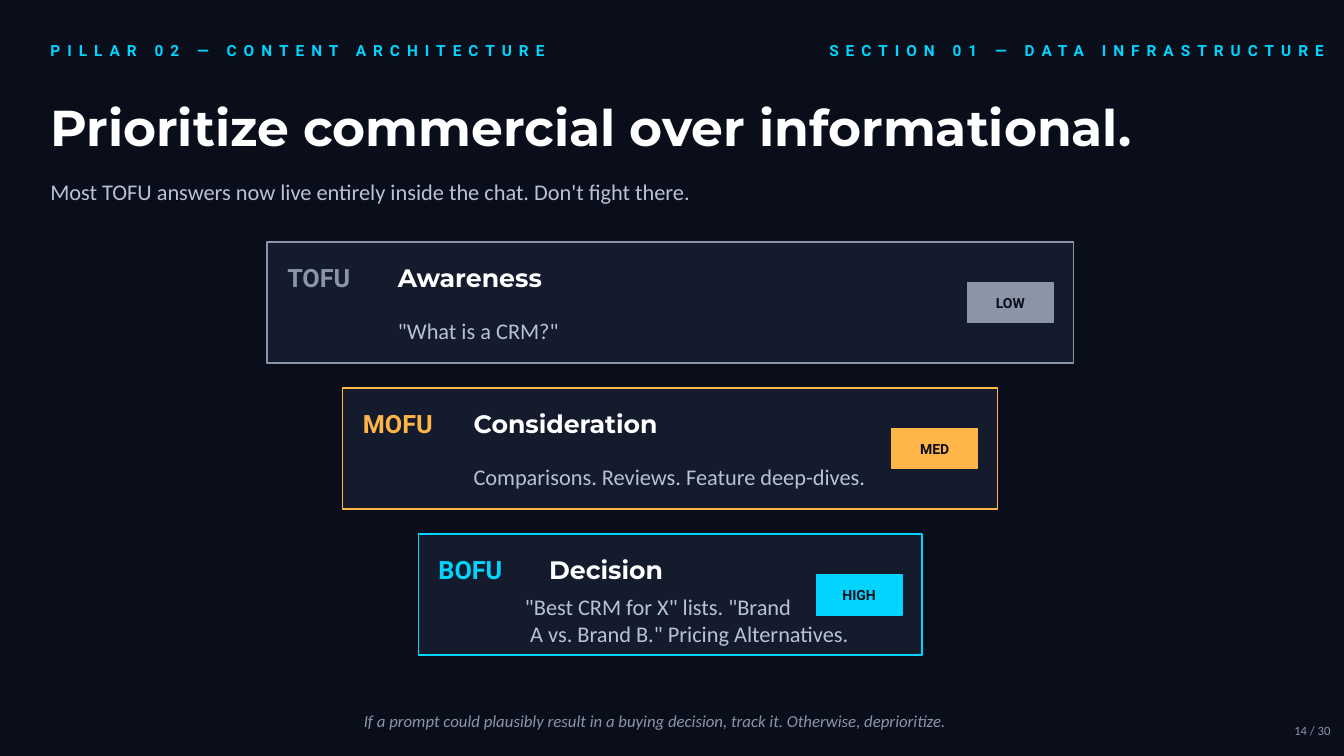
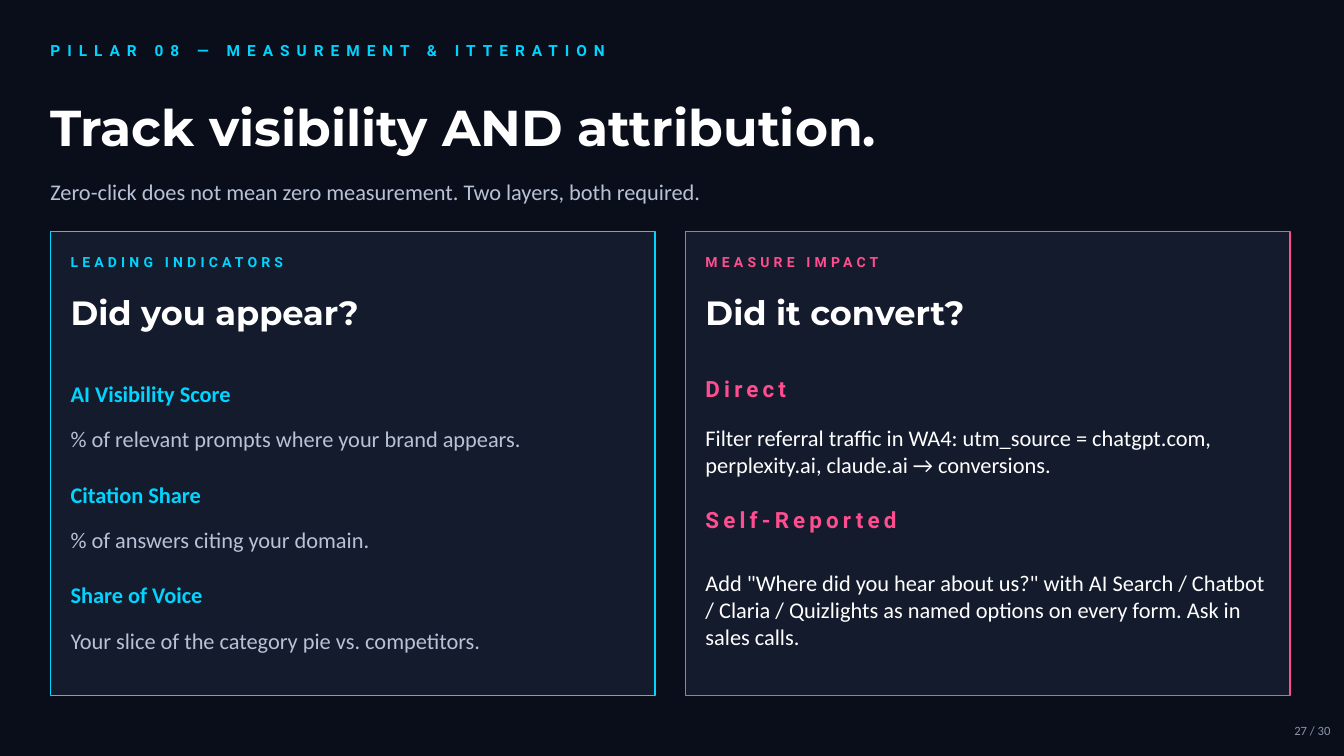
from pptx import Presentation
from pptx.dml.color import RGBColor
from pptx.enum.shapes import MSO_SHAPE
from pptx.enum.text import MSO_ANCHOR, MSO_AUTO_SIZE, PP_ALIGN
from pptx.util import Cm, Pt

RECT = MSO_SHAPE.RECTANGLE
MIDDLE = MSO_ANCHOR.MIDDLE
FIXED = MSO_AUTO_SIZE.NONE
LEFT, CENTER, RIGHT = PP_ALIGN.LEFT, PP_ALIGN.CENTER, PP_ALIGN.RIGHT

COLORS = {
    "night": "0A0E1A", "panel": "141B2D", "white": "FFFFFF", "soft": "B8C2D6",
    "gray": "8B95A8", "amber": "FFB547", "cyan": "00D4FF", "pink": "FF4D8F",
}

# Text styles: font attributes, default colour, letter spacing in points
STYLES = {
    "title": ({"name": "Montserrat", "size": Pt(36), "bold": True}, "white", 0),
    "head": ({"name": "Montserrat", "size": Pt(24), "bold": True}, "white", 0),
    "stage": ({"name": "Montserrat", "size": Pt(18), "bold": True}, "white", 0),
    "code": ({"name": "Roboto", "size": Pt(18), "bold": True}, "gray", 0),
    "badge": ({"name": "Roboto", "size": Pt(10), "bold": True}, "night", 0),
    "kicker": ({"name": "Roboto", "size": Pt(11), "bold": True}, "cyan", 5),
    "label": ({"name": "Roboto", "size": Pt(10), "bold": True}, "cyan", 3),
    "spaced": ({"name": "Roboto", "size": Pt(16), "bold": True}, "pink", 3),
    "term": ({"name": "Calibri", "size": Pt(16), "bold": True}, "cyan", 0),
    "body": ({"name": "Calibri", "size": Pt(16), "bold": False}, "soft", 0),
    "note": ({"name": "Calibri", "size": Pt(12), "italic": True}, "gray", 0),
    "page": ({"name": "Calibri", "size": Pt(9)}, "gray", 0),
}
FRAME = {
    "margin_left": 0, "margin_top": 0, "margin_right": 0, "margin_bottom": 0,
    "word_wrap": True, "auto_size": FIXED, "vertical_anchor": MIDDLE,
}
EDGE, PAD, FULL = 1.27, 0.51, 30.48
PAGES = 30


def color(key):
    return RGBColor.from_string(COLORS[key])


def write(shape, words, style, hue=None, align=LEFT):
    """Fill a shape with one paragraph in a named style."""
    fonts, base, gap = STYLES[style]
    frame = shape.text_frame
    for key, value in FRAME.items():
        setattr(frame, key, value)
    para = frame.paragraphs[0]
    para.text = words
    para.alignment = align
    for run in para.runs:
        for key, value in fonts.items():
            setattr(run.font, key, value)
        run.font.color.rgb = color(hue or base)
        if gap:
            run.font._element.set("spc", str(gap * 100))
    return para


def text(slide, box, words, style, hue=None, align=LEFT):
    shape = slide.shapes.add_textbox(*map(Cm, box))
    return write(shape, words, style, hue, align)


def panel(slide, box, fill, line):
    shape = slide.shapes.add_shape(RECT, *map(Cm, box))
    shape.shadow.inherit = False
    shape.fill.solid()
    shape.fill.fore_color.rgb = color(fill)
    shape.line.color.rgb = color(line)
    shape.line.width = Pt(1)
    return shape


def base(deck, kicker, title, lead, page):
    """Slide with the shared header and page number."""
    slide = deck.slides.add_slide(deck.slide_layouts[5])
    head = slide.shapes.title
    head.left, head.top, head.width, head.height = map(Cm, (EDGE, 2.03, FULL, 2.29))
    write(head, title, "title")
    text(slide, (EDGE, 0.89, 15.24, 0.76), kicker, "kicker")
    text(slide, (EDGE, 4.32, FULL, 1.02), lead, "body")
    text(slide, (31.5, 18.03, 2.03, 0.76), f"{page} / {PAGES}", "page", align=RIGHT)
    return slide


def tier(slide, box, item):
    """One funnel stage: code, name, example and priority badge."""
    x, y, w, h = box
    code, name, words, level, hue, spot = item
    panel(slide, box, "panel", hue)
    text(slide, (x + PAD, y + 0.25, 2.54, 1.27), code, "code", hue)
    text(slide, (x + 3.3, y + 0.25, 10.16, 1.27), name, "stage")
    dx, dy, wide, high = spot
    para = text(slide, (x + dx, y + dy, wide, high), words, "body")
    if "\v" in words:
        # Second line sits slightly further in than the first
        props = para._p.get_or_add_pPr()
        props.set("marL", str(Cm(0.13)))
        props.set("indent", str(Cm(-0.13)))
    badge = panel(slide, (x + w - PAD - 2.16, y + (h - 1.02) / 2, 2.16, 1.02), hue, hue)
    write(badge, level, "badge", align=CENTER)


def card(slide, box, label, head, hue, items, looks, high, step):
    """Panel with a label, a heading and evenly stepped term and body pairs."""
    x, y, w, _ = box
    left, wide = x + PAD, w - 2 * PAD
    panel(slide, box, "panel", hue)
    text(slide, (left, y + 0.38, wide, 0.76), label, "label", hue)
    text(slide, (left, y + 1.27, wide, 1.52), head, "head")
    term, tone = looks
    for i, (name, words, tall) in enumerate(items):
        top = y + 3.56 + i * step
        text(slide, (left, top, wide, high), name, term, hue)
        text(slide, (left, top + high, wide, tall), words, "body", tone)


def funnel(deck):
    slide = base(deck, "PILLAR 02 — CONTENT ARCHITECTURE",
                 "Prioritize commercial over informational.",
                 "Most TOFU answers now live entirely inside the chat. Don't fight there.", 14)
    text(slide, (20.9, 0.89, 12.9, 0.76), "SECTION 01 — DATA INFRASTRUCTURE", "kicker")
    tiers = [
        ("TOFU", "Awareness", '"What is a CRM?"', "LOW", "gray",
         (3.3, 1.52, 13.97, 1.4)),
        ("MOFU", "Consideration", "Comparisons. Reviews. Feature deep-dives.", "MED", "amber",
         (3.3, 1.52, 10.16, 1.4)),
        ("BOFU", "Decision",
         '"Best CRM for X" lists. "Brand\vA vs. Brand B." Pricing Alternatives.', "HIGH", "cyan",
         (2.69, 1.14, 8.86, 2.03)),
    ]
    # Stages narrow evenly around one centre line
    for i, item in enumerate(tiers):
        wide = 20.32 - i * 3.81
        tier(slide, (16.89 - wide / 2, 6.1 + i * 3.68, wide, 3.05), item)
    text(slide, (EDGE, 17.65, FULL, 1.02),
         "If a prompt could plausibly result in a buying decision, track it. "
         "Otherwise, deprioritize.", "note", align=CENTER)


def measure(deck):
    slide = base(deck, "PILLAR 08 — MEASUREMENT & ITTERATION",
                 "Track visibility AND attribution.",
                 "Zero-click does not mean zero measurement. Two layers, both required.", 27)
    signs = [
        ("AI Visibility Score", "% of relevant prompts where your brand appears.", 1.27),
        ("Citation Share", "% of answers citing your domain.", 1.27),
        ("Share of Voice", "Your slice of the category pie vs. competitors.", 1.27),
    ]
    proofs = [
        ("Direct", "Filter referral traffic in WA4: utm_source = chatgpt.com, "
         "perplexity.ai, claude.ai → conversions.", 2.41),
        ("Self-Reported", 'Add "Where did you hear about us?" with AI Search / '
         "Chatbot / Claria / Quizlights as named options on every form. "
         "Ask in sales calls.", 3.81),
    ]
    cards = [
        ("LEADING INDICATORS", "Did you appear?", "cyan", signs, ("term", "soft"), 1.02, 2.54),
        ("MEASURE IMPACT", "Did it convert?", "pink", proofs, ("spaced", "white"), 0.76, 3.3),
    ]
    wide, gap = 15.24, 0.76
    for i, parts in enumerate(cards):
        card(slide, (EDGE + i * (wide + gap), 5.84, wide, 11.68), *parts)


def main():
    deck = Presentation()
    deck.slide_width, deck.slide_height = Cm(33.87), Cm(19.05)
    # Shared background
    fill = deck.slide_master.background.fill
    fill.solid()
    fill.fore_color.rgb = color("night")
    funnel(deck)
    measure(deck)
    deck.save("out.pptx")


if __name__ == "__main__":
    main()
